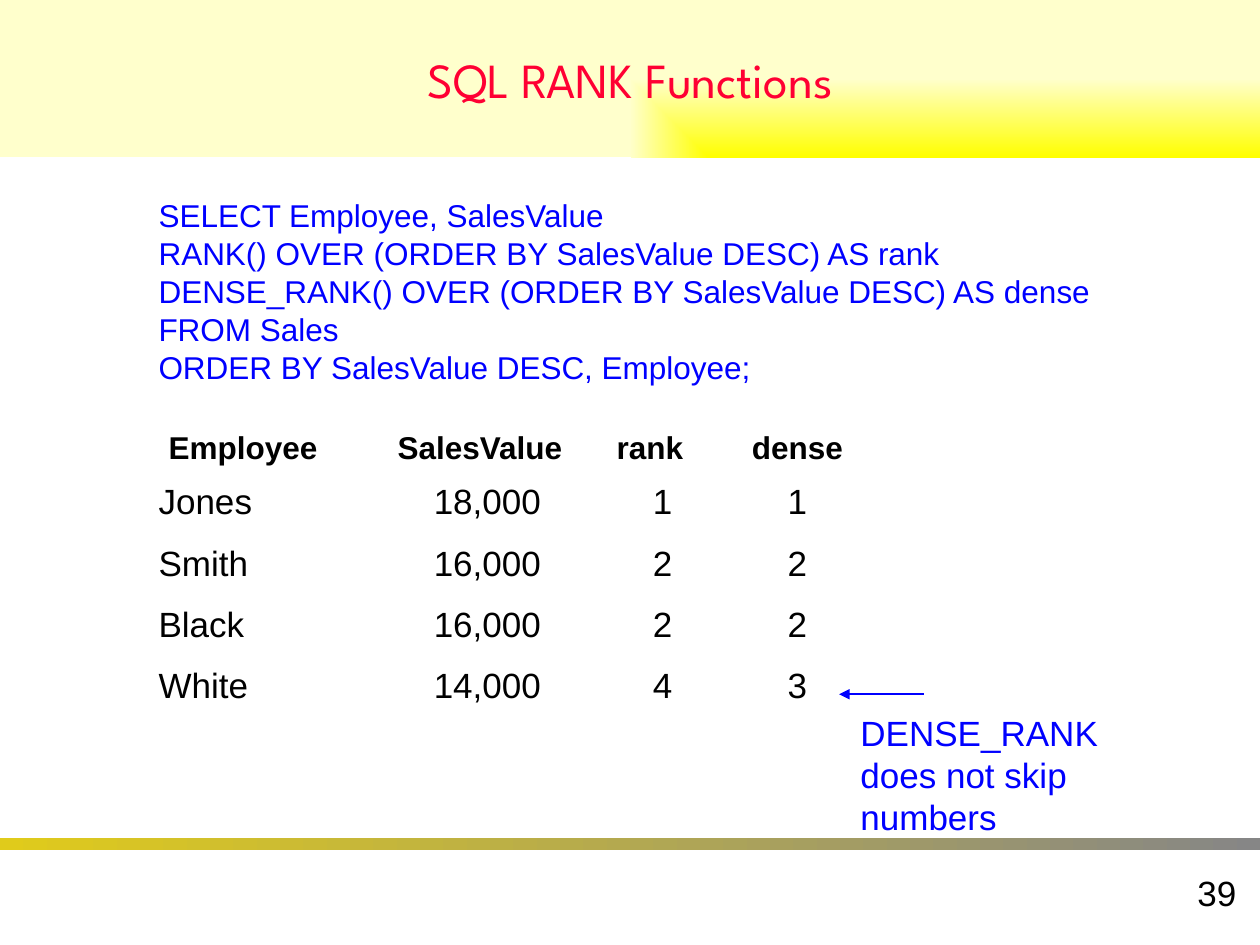
from lxml import etree
from pptx import Presentation
from pptx.dml.color import RGBColor
from pptx.enum.shapes import MSO_CONNECTOR, MSO_SHAPE
from pptx.enum.text import MSO_ANCHOR, PP_ALIGN
from pptx.oxml.ns import qn
from pptx.util import Inches, Pt

LEFT, CENTER, RIGHT = PP_ALIGN.LEFT, PP_ALIGN.CENTER, PP_ALIGN.RIGHT
TOP, MIDDLE = MSO_ANCHOR.TOP, MSO_ANCHOR.MIDDLE
RECT, STRAIGHT = MSO_SHAPE.RECTANGLE, MSO_CONNECTOR.STRAIGHT

RED = RGBColor(0xFF, 0x00, 0x33)
BLUE = RGBColor(0x00, 0x00, 0xFF)
BLACK = RGBColor(0x00, 0x00, 0x00)
YELLOW = RGBColor(0xFF, 0xFF, 0x00)
CREAM = RGBColor(0xFF, 0xFF, 0xCC)
GOLD = RGBColor(0xE0, 0xCB, 0x1B)
GRAY = RGBColor(0x86, 0x86, 0x86)

TITLE = "SQL RANK Functions"
QUERY = [
    "SELECT Employee, SalesValue",
    "RANK() OVER (ORDER BY SalesValue DESC) AS rank",
    "DENSE_RANK() OVER (ORDER BY SalesValue DESC) AS dense",
    "FROM Sales",
    "ORDER BY SalesValue DESC, Employee;",
]
HEADS = ("Employee", "SalesValue", "rank", "dense")
ROWS = [
    ("Jones", "18,000", "1", "1"),
    ("Smith", "16,000", "2", "2"),
    ("Black", "16,000", "2", "2"),
    ("White", "14,000", "4", "3"),
]
NOTE = "DENSE_RANK does not skip numbers"
PAGE = "39"

WIDE, HIGH = 10, 7.5
EDGE = 1.16                      # left edge of query and rows
HEAD_TABS = (2.47, 3.82, 4.99)   # column centres, from the text edge
ROW_TABS = (2.61, 4.0, 5.07)


def add_tabs(para, stops):
    tabs = etree.SubElement(para._p.get_or_add_pPr(), qn("a:tabLst"))
    for stop in stops:
        etree.SubElement(tabs, qn("a:tab"), pos=str(Inches(stop)), algn="ctr")


def write(shape, lines, size=20, color=BLACK, font="Arial", bold=False,
          align=LEFT, anchor=TOP, gap=0, tabs=()):
    frame = shape.text_frame
    frame.word_wrap = True
    frame.vertical_anchor = anchor
    for i, line in enumerate(lines):
        para = frame.paragraphs[0] if i == 0 else frame.add_paragraph()
        para.alignment = align
        para.space_before = Pt(gap)
        if tabs:
            add_tabs(para, tabs)
        run = para.add_run()
        run.text = line
        run.font.name, run.font.size = font, Pt(size)
        run.font.bold, run.font.color.rgb = bold, color


def add_box(slide, x, y, w, h):
    return slide.shapes.add_textbox(*map(Inches, (x, y, w, h)))


def add_band(slide, y, h, colors):
    """Add a full-width bar that fades from the first colour to the second."""
    band = slide.shapes.add_shape(RECT, 0, Inches(y), Inches(WIDE), Inches(h))
    band.shadow.inherit = False
    band.line.fill.background()
    band.fill.gradient()
    band.fill.gradient_angle = 0
    for stop, color in zip(band.fill.gradient_stops, colors):
        stop.color.rgb = color
    return band


def fade_from_corner(band):
    """Let the fade start at the lower right corner."""
    grad = band._element.spPr.find(qn("a:gradFill"))
    grad.remove(grad.find(qn("a:lin")))
    shade = etree.SubElement(grad, qn("a:path"))
    shade.set("path", "rect")
    etree.SubElement(shade, qn("a:fillToRect"), l="100000", t="100000")


def add_arrow(slide, start, end, y):
    arrow = slide.shapes.add_connector(
        STRAIGHT, Inches(start), Inches(y), Inches(end), Inches(y))
    arrow.line.color.rgb = BLUE
    arrow.line.width = Pt(1)
    etree.SubElement(arrow.line._get_or_add_ln(), qn("a:tailEnd"),
                     type="triangle")
    etree.SubElement(arrow._element.spPr, qn("a:effectLst"))


def main():
    deck = Presentation()
    deck.slide_width, deck.slide_height = Inches(WIDE), Inches(HIGH)
    slide = deck.slides.add_slide(deck.slide_layouts[6])

    add_band(slide, 6.65, 0.1, (GOLD, GRAY))
    head = add_band(slide, 0, HIGH / 6, (YELLOW, CREAM))
    fade_from_corner(head)
    write(head, [TITLE], size=28, color=RED, font="League Spartan",
          align=CENTER, anchor=MIDDLE)
    write(add_box(slide, 7.83, 6.83, 2.08, 0.5), [PAGE],
          align=RIGHT, anchor=MIDDLE)

    write(add_box(slide, EDGE, 1.51, 7.75, 1.6), QUERY, size=18, color=BLUE)
    write(add_box(slide, 1.24, 3.35, 5.67, 0.4), ["\t".join(HEADS)],
          size=18, bold=True, tabs=HEAD_TABS)
    write(add_box(slide, EDGE, 3.76, 5.75, 1.93),
          ["\t".join(row) for row in ROWS], gap=11, tabs=ROW_TABS)

    add_arrow(slide, 7.33, 6.66, 5.51)
    write(add_box(slide, 6.73, 5.6, 2.18, 1.1), [NOTE], color=BLUE)
    deck.save("out.pptx")


if __name__ == "__main__":
    main()
